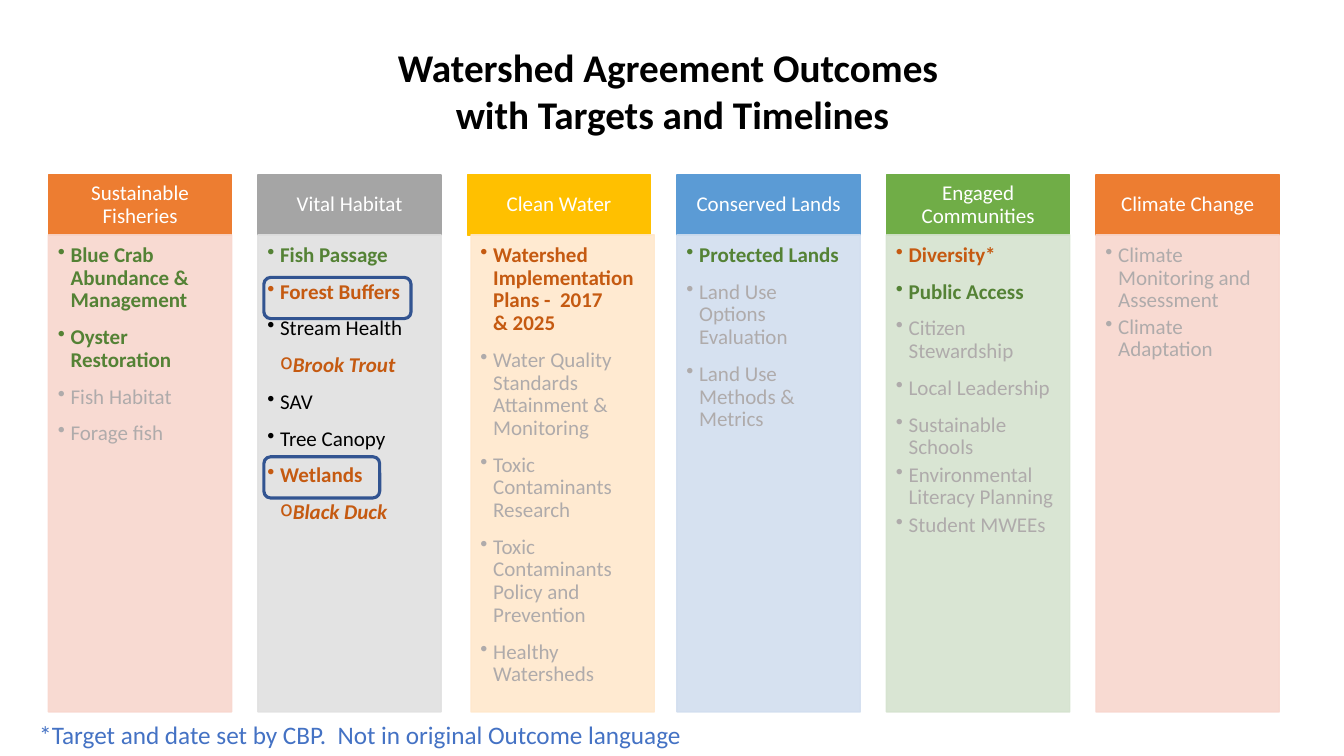
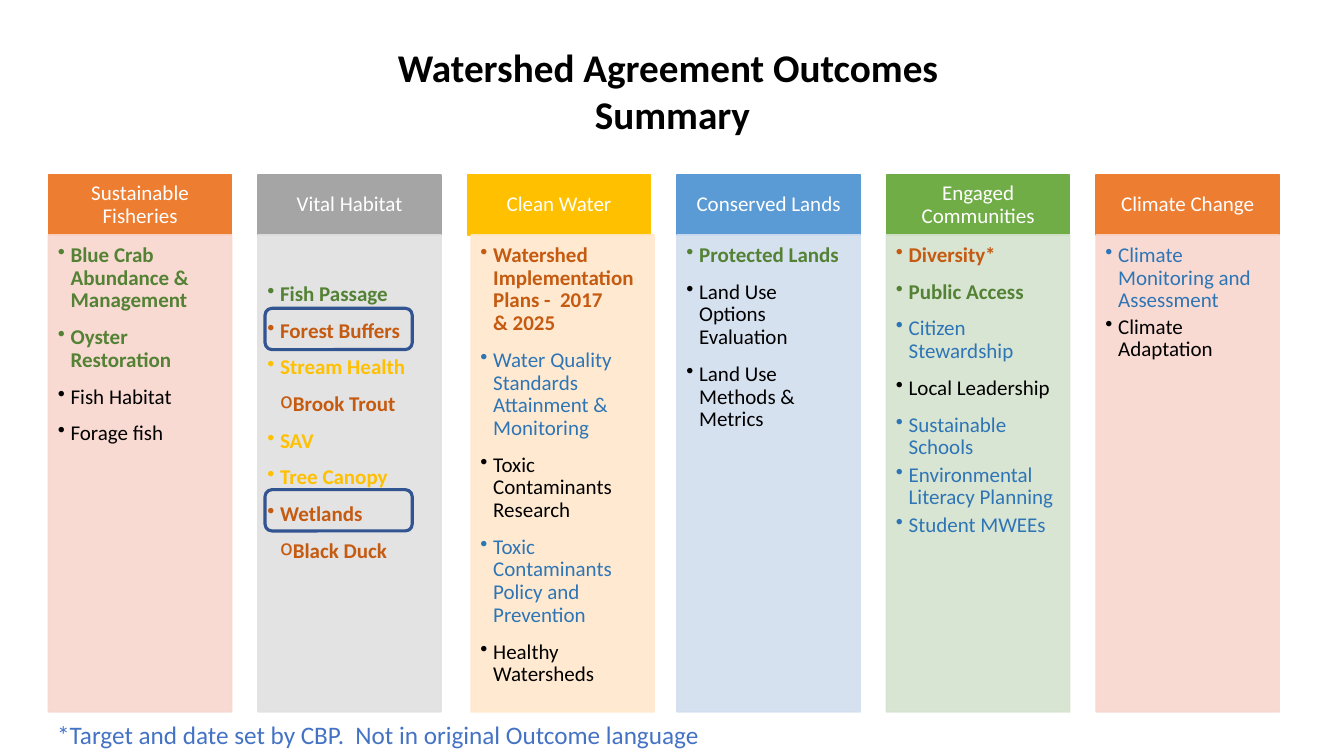
from dataclasses import dataclass
from typing import NamedTuple

from lxml import etree
from pptx import Presentation
from pptx.dml.color import RGBColor
from pptx.enum.shapes import MSO_SHAPE
from pptx.enum.text import MSO_ANCHOR, MSO_AUTO_SIZE, PP_ALIGN
from pptx.oxml.ns import qn
from pptx.util import Cm, Pt

RECT, ROUND = MSO_SHAPE.RECTANGLE, MSO_SHAPE.ROUNDED_RECTANGLE
TOP, MIDDLE = MSO_ANCHOR.TOP, MSO_ANCHOR.MIDDLE
LEFT, CENTER = PP_ALIGN.LEFT, PP_ALIGN.CENTER
NO_FIT = MSO_AUTO_SIZE.NONE
TITLE_ONLY = 5

FACE = "Calibri"
BLACK, WHITE, GREY = "000000", "FFFFFF", "AFABAB"
GREEN, RUST, GOLD, BLUE = "548235", "C55A11", "FFC000", "2E75B6"
NOTE, FRAME = "4472C4", "325491"

# Column grid, in centimetres
START, PITCH, WIDE = 1.22, 5.28, 4.62
HEAD_TOP, HEAD_HIGH, BODY_HIGH = 4.41, 1.51, 12.02
FRAME_HIGH = 1.04
INDENT = 0.32

# Outcome status
MET, DUE, KIN, LAND, WATCH, OPEN = "met", "due", "kin", "land", "watch", "open"


class Look(NamedTuple):
    color: str
    bold: bool = False
    italic: bool = False


class Item(NamedTuple):
    text: str
    status: str
    after: float = 10


class Box(NamedTuple):
    left: float
    top: float
    width: float
    height: float


@dataclass
class Column:
    name: str
    dark: str
    pale: str
    items: list[Item]
    shift: float = 0


@dataclass
class Page:
    title: str
    looks: dict[str, Look]
    note_left: float
    frames: list[Box]
    drop: float = 0  # extra space above the habitat list


HABITAT = "Vital Habitat"
COLUMNS = [
    Column("Sustainable Fisheries", "ED7D31", "F8D7CE", [
        Item("Blue Crab Abundance & Management", MET),
        Item("Oyster Restoration", MET),
        Item("Fish Habitat", OPEN),
        Item("Forage fish", OPEN),
    ]),
    Column(HABITAT, "A5A5A5", "E1E1E1", [
        Item("Fish Passage", MET),
        Item("Forest Buffers", DUE),
        Item("Stream Health", LAND),
        Item("Brook Trout", KIN),
        Item("SAV", LAND),
        Item("Tree Canopy", LAND),
        Item("Wetlands", DUE),
        Item("Black Duck", KIN),
    ]),
    Column("Clean Water", "FFC000", "FFE8CC", [
        Item("Watershed Implementation Plans -  2017\v& 2025", DUE),
        Item("Water Quality Standards Attainment & Monitoring", WATCH),
        Item("Toxic Contaminants Research", OPEN),
        Item("Toxic Contaminants Policy and Prevention", WATCH),
        Item("Healthy Watersheds", OPEN),
    ], shift=0.09),
    Column("Conserved Lands", "5B9BD5", "D2DEEF", [
        Item("Protected Lands", MET),
        Item("Land Use Options Evaluation", OPEN),
        Item("Land Use Methods & Metrics", OPEN),
    ]),
    Column("Engaged Communities", "70AD47", "D5E3CF", [
        Item("Diversity*", DUE),
        Item("Public Access", MET),
        Item("Citizen Stewardship", WATCH),
        Item("Local Leadership", OPEN),
        Item("Sustainable Schools", WATCH, 3.4),
        Item("Environmental Literacy Planning", WATCH, 3.4),
        Item("Student MWEEs", WATCH, 3.4),
    ]),
    Column("Climate Change", "ED7D31", "F8D7CE", [
        Item("Climate Monitoring and Assessment", WATCH, 2.4),
        Item("Climate Adaptation", OPEN, 2.4),
    ]),
]

SHARED = {MET: Look(GREEN, True), DUE: Look(RUST, True)}
PAGES = [
    Page(
        "Watershed Agreement Outcomes \vwith Targets and Timelines",
        SHARED | {KIN: Look(RUST, True, True), LAND: Look(BLACK),
                  WATCH: Look(GREY), OPEN: Look(GREY)},
        0.74,
        [Box(6.65, 11.51, 2.92, FRAME_HIGH), Box(6.65, 6.99, 3.71, FRAME_HIGH)],
    ),
    Page(
        "Watershed Agreement Outcomes \vSummary",
        SHARED | {KIN: Look(RUST, True), LAND: Look(GOLD, True),
                  WATCH: Look(BLUE), OPEN: Look(BLACK)},
        1.19,
        [Box(6.68, 7.77, 3.71, FRAME_HIGH), Box(6.68, 12.34, 3.71, FRAME_HIGH)],
        drop=0.98,
    ),
]


def place(box: Box) -> tuple[Cm, ...]:
    return tuple(Cm(v) for v in box)


def paint(target, color: str, alpha: int = 100) -> None:
    """Give a fill or a line's fill a solid colour, alpha in percent."""
    target.solid()
    target.fore_color.rgb = RGBColor.from_string(color)
    if alpha < 100:
        for tone in target._xPr.iter(qn("a:srgbClr")):
            etree.SubElement(tone, qn("a:alpha"), val=str(alpha * 1000))


def style(para, size: float, look: Look) -> None:
    font = para.font
    font.name, font.size = FACE, Pt(size)
    font.bold, font.italic = look.bold, look.italic
    font.color.rgb = RGBColor.from_string(look.color)


def panel(slide, box: Box, color: str, alpha: int, pads: Box, anchor):
    """Draw a filled rectangle and return its text frame."""
    shape = slide.shapes.add_shape(RECT, *place(box))
    shape.shadow.inherit = False
    paint(shape.fill, color, alpha)
    paint(shape.line.fill, color, alpha)
    shape.line.width = Pt(1)
    frame = shape.text_frame
    frame.word_wrap = True
    frame.vertical_anchor = anchor
    (frame.margin_left, frame.margin_top,
     frame.margin_right, frame.margin_bottom) = place(pads)
    return frame


def bullet(para, mark: str, depth: int) -> None:
    props = para._p.get_or_add_pPr()
    props.set("marL", str(Cm(INDENT * (depth + 1))))
    props.set("indent", str(-Cm(INDENT)))
    etree.SubElement(props, qn("a:buChar"), char=mark)


def fill_list(frame, items: list[Item], looks: dict[str, Look]) -> None:
    for i, item in enumerate(items):
        para = frame.add_paragraph() if i else frame.paragraphs[0]
        para.text = item.text
        depth = int(item.status == KIN)
        para.level = depth
        bullet(para, "o" if depth else "•", depth)
        para.alignment = LEFT
        para.line_spacing = 0.9
        para.space_after = Pt(item.after)
        style(para, 15, looks[item.status])


def add_column(slide, col: Column, left: float, page: Page) -> None:
    head = panel(slide, Box(left, HEAD_TOP, WIDE, HEAD_HIGH), col.dark, 100,
                 Box(0.3, 0.18, 0.3, 0.18), MIDDLE)
    para = head.paragraphs[0]
    para.text = col.name
    para.alignment = CENTER
    para.line_spacing = 0.9
    style(para, 15, Look(WHITE))

    drop = page.drop if col.name == HABITAT else 0
    area = Box(left + col.shift, HEAD_TOP + HEAD_HIGH, WIDE, BODY_HIGH)
    body = panel(slide, area, col.pale, 90,
                 Box(0.24, 0.24 + drop, 0.32, 0.34), TOP)
    fill_list(body, col.items, page.looks)


def add_title(slide, text: str) -> None:
    title = slide.shapes.title
    title.left, title.top, title.width, title.height = place(
        Box(1.73, 1.02, 30.43, 2.49))
    frame = title.text_frame
    frame.auto_size = NO_FIT
    frame.vertical_anchor = MIDDLE
    para = frame.paragraphs[0]
    para.text = text
    para.alignment = CENTER
    style(para, 28, Look(BLACK, True))


def add_note(slide, left: float) -> None:
    frame = slide.shapes.add_textbox(
        *place(Box(left, 17.96, 16.92, 1.04))).text_frame
    frame.word_wrap = True
    para = frame.paragraphs[0]
    para.text = "*Target and date set by CBP.  Not in original Outcome language"
    para.line_spacing = 1.07
    style(para, 18, Look(NOTE))


def add_frame(slide, box: Box) -> None:
    shape = slide.shapes.add_shape(ROUND, *place(box))
    shape.shadow.inherit = False
    shape.fill.background()
    paint(shape.line.fill, FRAME)
    shape.line.width = Pt(2.25)


def main() -> None:
    deck = Presentation()
    deck.slide_width, deck.slide_height = Cm(33.87), Cm(19.05)
    for page in PAGES:
        slide = deck.slides.add_slide(deck.slide_layouts[TITLE_ONLY])
        add_title(slide, page.title)
        for i, col in enumerate(COLUMNS):
            add_column(slide, col, START + i * PITCH, page)
        add_note(slide, page.note_left)
        for box in page.frames:
            add_frame(slide, box)
    deck.save("out.pptx")


if __name__ == "__main__":
    main()
